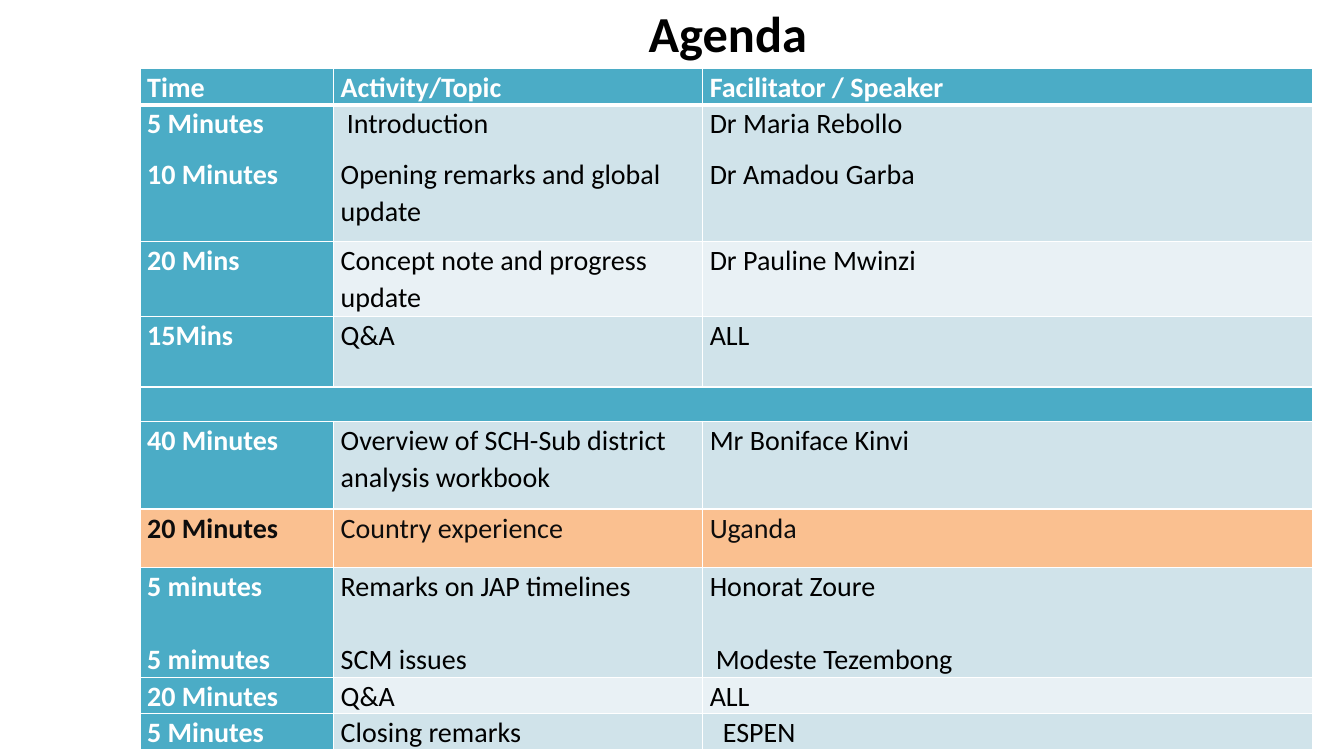
from lxml.etree import SubElement
from pptx import Presentation
from pptx.dml.color import RGBColor
from pptx.enum.text import MSO_ANCHOR, PP_ALIGN
from pptx.oxml.ns import qn
from pptx.util import Inches, Pt

FONT = "Calibri"
TEAL, ORANGE, DARK_BAND, LIGHT_BAND = "4BACC6", "FAC090", "D0E3EA", "E9F1F5"
WHITE, BLACK, NEAR_BLACK = "FFFFFF", "000000", "0D0D0D"

COLUMN_WIDTHS = [1.92, 3.66, 6.05]
# Row height, body fill, then the lines of each cell
AGENDA = [
    (0.36, TEAL, ["Time"], ["Activity/Topic"], ["Facilitator / Speaker"]),
    (1.36, DARK_BAND, ["5 Minutes", "10 Minutes"],
     ["Introduction", "Opening remarks and global update"],
     ["Dr Maria Rebollo", "Dr Amadou Garba"]),
    (0.74, LIGHT_BAND, ["20 Mins"], ["Concept note and progress update"],
     ["Dr Pauline Mwinzi"]),
    (0.7, DARK_BAND, ["15Mins"], ["Q&A"], ["ALL"]),
    (0.34, TEAL, [], [], []),
    (0.87, DARK_BAND, ["40 Minutes"],
     ["Overview of SCH-Sub district analysis workbook"], ["Mr Boniface Kinvi"]),
    (0.58, ORANGE, ["20 Minutes"], ["Country experience"], ["Uganda"]),
    (1.09, DARK_BAND, ["5 minutes", "5 mimutes"],
     ["Remarks on JAP timelines", "SCM issues"],
     ["Honorat Zoure", "Modeste Tezembong"]),
    (0.36, LIGHT_BAND, ["20 Minutes"], ["Q&A"], ["ALL"]),
    (0.36, DARK_BAND, ["5 Minutes"], ["Closing remarks"], ["ESPEN"]),
]
HEADER_ROW, BREAK_ROW, REMARKS_ROW = 0, 4, 7
INDENTS = {"Introduction": 0.06, "Modeste Tezembong": 0.06, "ESPEN": 0.13}


def color(value):
    return RGBColor.from_string(value)


def style(para, size, ink, bold):
    para.font.name = FONT
    para.font.size = Pt(size)
    para.font.bold = bold
    para.font.color.rgb = color(ink)


def set_borders(cell, top, bottom):
    properties = cell._tc.get_or_add_tcPr()
    sides = [("a:lnL", 1), ("a:lnR", 1), ("a:lnT", top), ("a:lnB", bottom)]
    for place, (side, width) in enumerate(sides):
        line = SubElement(properties, qn(side), w=str(Pt(width)))
        fill = SubElement(line, qn("a:solidFill"))
        SubElement(fill, qn("a:srgbClr"), val=WHITE)
        properties.insert(place, line)


def add_title(slide, left, top, width, height):
    box = slide.shapes.add_textbox(Inches(left), Inches(top), Inches(width), Inches(height))
    frame = box.text_frame
    frame.word_wrap = True
    frame.vertical_anchor = MSO_ANCHOR.MIDDLE
    frame.margin_right = Inches(0.2)
    frame.text = "Agenda"
    para = frame.paragraphs[0]
    para.alignment = PP_ALIGN.CENTER
    style(para, 36, BLACK, True)


def fill_cell(cell, lines, fill, ink, bold, gap):
    cell.fill.solid()
    cell.fill.fore_color.rgb = color(fill)
    cell.margin_left = cell.margin_right = Inches(0.07)
    cell.margin_top = cell.margin_bottom = 0
    cell.text_frame.text = "\n".join(lines)
    for number, para in enumerate(cell.text_frame.paragraphs):
        para.line_spacing = 1.07
        if number:
            para.space_before = Pt(gap)
        if para.text in INDENTS:
            para._p.get_or_add_pPr().set("marL", str(Inches(INDENTS[para.text])))
        style(para, 20 if lines else 18, ink, bold)


def add_agenda(slide, left, top):
    width = sum(COLUMN_WIDTHS)
    height = sum(row[0] for row in AGENDA)
    table = slide.shapes.add_table(
        len(AGENDA), len(COLUMN_WIDTHS),
        Inches(left), Inches(top), Inches(width), Inches(height)).table
    for column, column_width in zip(table.columns, COLUMN_WIDTHS):
        column.width = Inches(column_width)

    for r, (row_height, body_fill, *cells) in enumerate(AGENDA):
        table.rows[r].height = Inches(row_height)
        gap = 26 if r == REMARKS_ROW else 10
        for c, lines in enumerate(cells):
            heading = r == HEADER_ROW or c == 0
            # The orange row keeps its own fill and ink throughout
            if body_fill == ORANGE:
                fill, ink = ORANGE, NEAR_BLACK
            else:
                fill, ink = (TEAL, WHITE) if heading else (body_fill, BLACK)
            cell = table.cell(r, c)
            fill_cell(cell, lines, fill, ink, heading, gap)
            set_borders(cell, 3 if r == HEADER_ROW + 1 else 1,
                        3 if r == HEADER_ROW else 1)

    # Empty band between the two sessions
    table.cell(BREAK_ROW, 0).merge(table.cell(BREAK_ROW, len(COLUMN_WIDTHS) - 1))


def main():
    deck = Presentation()
    deck.slide_width, deck.slide_height = Inches(13.33), Inches(7.5)
    slide = deck.slides.add_slide(deck.slide_layouts[6])
    add_title(slide, 1.52, 0, 11.5, 0.65)
    add_agenda(slide, 1.39, 0.68)
    deck.save("out.pptx")


if __name__ == "__main__":
    main()
